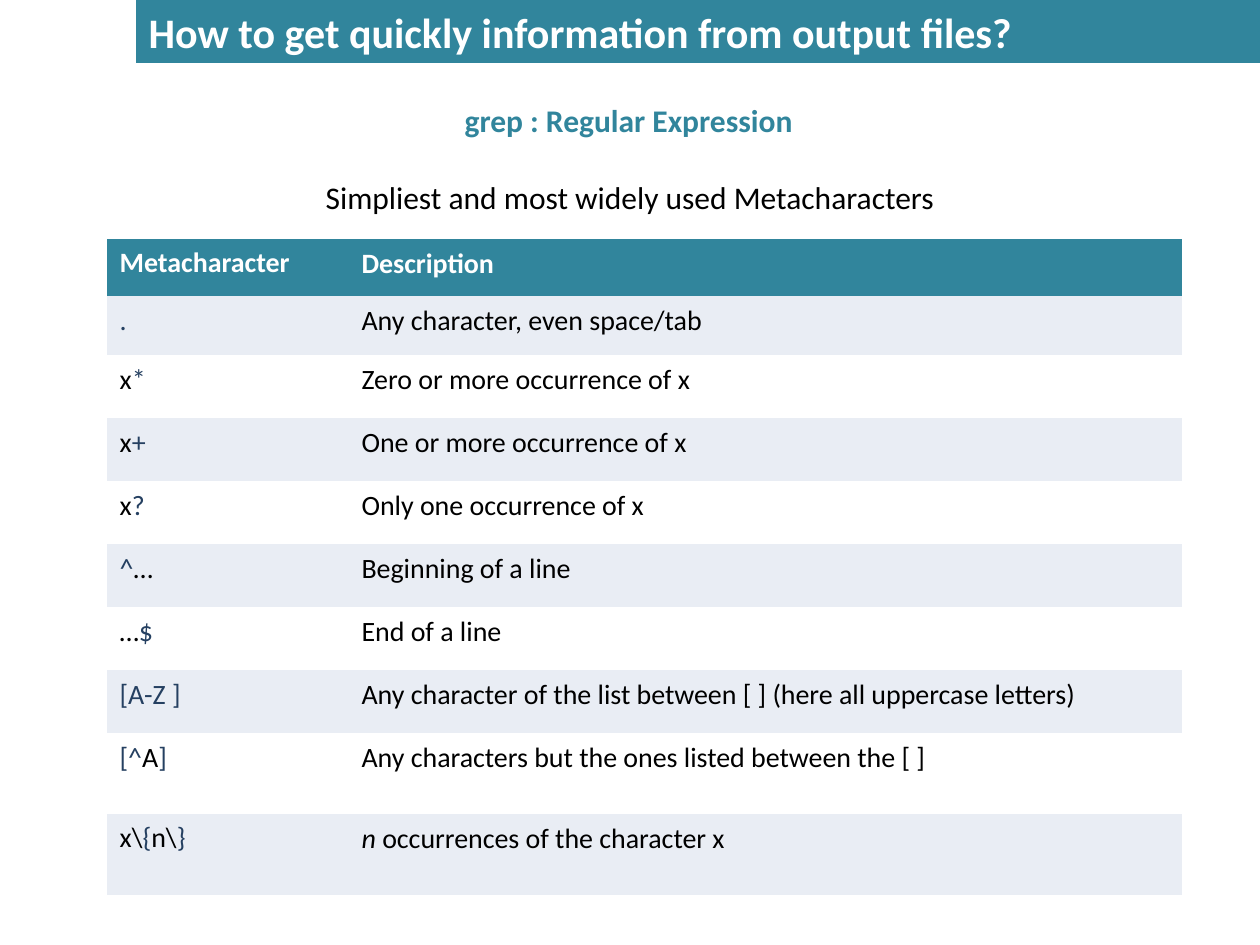
"""Build a slide listing the most used grep metacharacters."""
from dataclasses import dataclass

from pptx import Presentation
from pptx.dml.color import RGBColor
from pptx.enum.text import MSO_ANCHOR, MSO_AUTO_SIZE, PP_ALIGN
from pptx.oxml.ns import qn
from pptx.util import Inches, Pt

LEFT, CENTER, JUSTIFY = PP_ALIGN.LEFT, PP_ALIGN.CENTER, PP_ALIGN.JUSTIFY
MIDDLE = MSO_ANCHOR.MIDDLE
NO_AUTOFIT = MSO_AUTO_SIZE.NONE
TITLE_ONLY = 5
FONT = "Calibri"
TEAL, NAVY, BLACK, WHITE, PALE = "31859C", "254061", "000000", "FFFFFF", "E9EDF4"
NO_STYLE_NO_GRID = "{2D5ABB26-0587-4C30-8999-92F81FD0307C}"


@dataclass(frozen=True)
class Span:
    text: str
    color: str = BLACK
    bold: bool = False
    italic: bool = False


@dataclass(frozen=True)
class Row:
    symbol: list[Span]
    description: list[Span]
    height: float = 0.5


@dataclass(frozen=True)
class Caption:
    span: Span
    left: float
    top: float
    width: float
    height: float
    spacing: float = 1.0


CAPTIONS = [
    Caption(Span("grep : Regular Expression", TEAL, bold=True), 1.9, 0.75, 6.18, 0.4),
    Caption(Span("Simpliest and most widely used Metacharacters"), 1.5, 1.35, 7, 0.42, 1.04),
]
COLUMN_WIDTHS = [1.92, 6.61]
ROWS = [
    Row([Span("Metacharacter", WHITE, bold=True)], [Span("Description", WHITE, bold=True)], 0.45),
    Row([Span(".", NAVY)], [Span("Any character, even space/tab")], 0.47),
    Row([Span("x"), Span("*", NAVY)], [Span("Zero or more occurrence of x")]),
    Row([Span("x"), Span("+", NAVY)], [Span("One or more occurrence of x")]),
    Row([Span("x"), Span("?", NAVY)], [Span("Only one occurrence of x")]),
    Row([Span("^", NAVY), Span("…")], [Span("Beginning of a line")]),
    Row([Span("…"), Span("$", NAVY)], [Span("End of a line")]),
    Row([Span("[A-Z ]", NAVY)],
        [Span("Any character of the list between [ ] (here all uppercase letters)")]),
    Row([Span("[^", NAVY), Span("A"), Span("]", NAVY)],
        [Span("Any characters but the ones listed between the [ ]")], 0.64),
    Row([Span("x\\"), Span("{", NAVY), Span("n\\"), Span("}", NAVY)],
        [Span("n ", italic=True), Span("occurrences of the character x")], 0.64),
]


def rgb(color: str) -> RGBColor:
    return RGBColor.from_string(color)


def paint(target, color: str) -> None:
    target.fill.solid()
    target.fill.fore_color.rgb = rgb(color)


def write(frame, spans: list[Span], size: float, align=LEFT, spacing: float = 1.0) -> None:
    paragraph = frame.paragraphs[0]
    paragraph.alignment = align
    paragraph.line_spacing = spacing
    for span in spans:
        run = paragraph.add_run()
        run.text = span.text
        font = run.font
        font.name, font.size = FONT, Pt(size)
        font.bold, font.italic = span.bold, span.italic
        font.color.rgb = rgb(span.color)


def place_title(title) -> None:
    title.left, title.top = Inches(1.08), Inches(0)
    title.width, title.height = Inches(8.92), Inches(0.5)
    paint(title, TEAL)
    frame = title.text_frame
    frame.auto_size = NO_AUTOFIT
    frame.vertical_anchor = MIDDLE
    write(frame, [Span("How to get quickly information from output files?", WHITE, bold=True)], 24)


def add_caption(slide, caption: Caption) -> None:
    box = slide.shapes.add_textbox(Inches(caption.left), Inches(caption.top),
                                   Inches(caption.width), Inches(caption.height))
    box.text_frame.word_wrap = True
    write(box.text_frame, [caption.span], 18, CENTER, caption.spacing)


def add_metacharacter_table(slide) -> None:
    height = sum(row.height for row in ROWS)
    table = slide.shapes.add_table(len(ROWS), len(COLUMN_WIDTHS), Inches(0.85), Inches(1.9),
                                   Inches(sum(COLUMN_WIDTHS)), Inches(height)).table
    table._tbl.tblPr.find(qn("a:tableStyleId")).text = NO_STYLE_NO_GRID
    table.horz_banding = False
    for column, width in zip(table.columns, COLUMN_WIDTHS):
        column.width = Inches(width)
    for index, row in enumerate(ROWS):
        table.rows[index].height = Inches(row.height)
        fill = TEAL if index == 0 else PALE if index % 2 else WHITE
        for cell, spans in zip(table.rows[index].cells, (row.symbol, row.description)):
            paint(cell, fill)
            cell.margin_top = Inches(0.07)
            cell.margin_bottom = Inches(0.05)
            write(cell.text_frame, spans, 16, spacing=0.93)
    heading, last_symbol = table.cell(0, 0), table.cell(len(ROWS) - 1, 0)
    heading.margin_top = Inches(0.06)
    heading.text_frame.paragraphs[0].alignment = JUSTIFY
    last_symbol.margin_top = Inches(0.05)
    last_symbol.text_frame.paragraphs[0].line_spacing = 1.02


def main() -> None:
    presentation = Presentation()
    presentation.slide_width, presentation.slide_height = Inches(10), Inches(7.5)
    slide = presentation.slides.add_slide(presentation.slide_layouts[TITLE_ONLY])
    place_title(slide.shapes.title)
    for caption in CAPTIONS:
        add_caption(slide, caption)
    add_metacharacter_table(slide)
    presentation.save("out.pptx")


if __name__ == "__main__":
    main()
